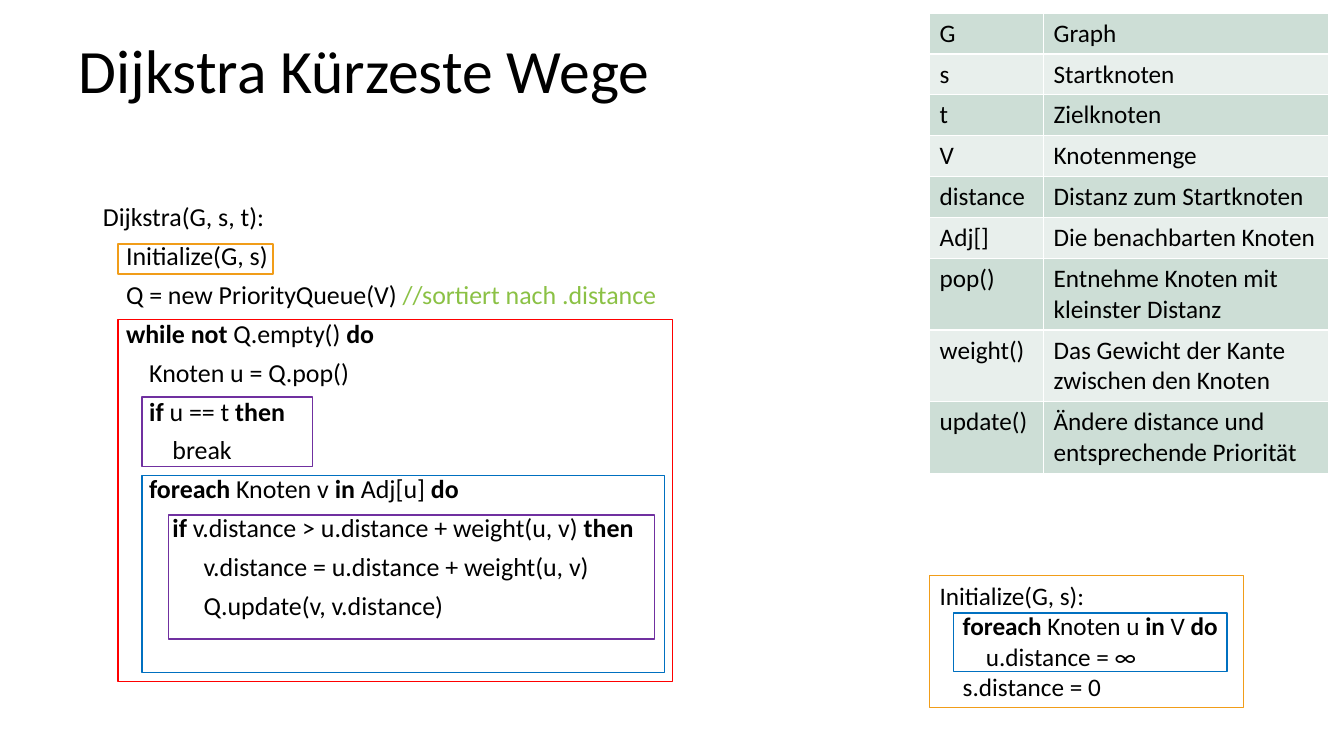
from dataclasses import dataclass
from lxml.etree import SubElement
from pptx import Presentation
from pptx.dml.color import RGBColor as RGB
from pptx.enum.shapes import MSO_SHAPE as SHAPE
from pptx.enum.text import MSO_ANCHOR as ANCHOR, MSO_AUTO_SIZE as AUTO, PP_ALIGN as ALIGN
from pptx.oxml.ns import qn
from pptx.util import Inches, Pt


@dataclass(frozen=True)
class Theme:
    font: str = "Calibri"
    title: float = 44
    code: float = 18.5
    small: float = 18
    black: str = "000000"
    white: str = "FFFFFF"
    comment: str = "8BC145"
    bands: tuple = ("CDDED6", "E8EFEC")
    orange: str = "F19D19"
    red: str = "FF0000"
    purple: str = "7030A0"
    blue: str = "0070C0"


T = Theme()

# Content: code lines are (indent in inches, text); *stars* mark bold keywords,
# and // starts a comment
TITLE = "Dijkstra Kürzeste Wege"
STEP = 0.23
CODE = [
    (0, "Dijkstra(G, s, t):"),
    (STEP, "Initialize(G, s)"),
    (STEP, "Q = new PriorityQueue(V) //sortiert nach .distance"),
    (STEP, "*while not* Q.empty() *do*"),
    (2 * STEP, "Knoten u = Q.pop()"),
    (2 * STEP, "*if* u == t *then*"),
    (3 * STEP, "break"),
    (2 * STEP, "*foreach* Knoten v *in* Adj[u] *do*"),
    (3 * STEP, "*if* v.distance > u.distance + weight(u, v) *then*"),
    (1, "v.distance = u.distance + weight(u, v)"),
    (1, "Q.update(v, v.distance)"),
]
INITIALIZE = [
    (0, "Initialize(G, s):"),
    (STEP, "*foreach* Knoten u *in* V *do*"),
    (2 * STEP, "u.distance = ∞"),
    (STEP, "s.distance = 0"),
]
LEGEND = [
    ("G", "Graph"),
    ("s", "Startknoten"),
    ("t", "Zielknoten"),
    ("V", "Knotenmenge"),
    ("distance", "Distanz zum Startknoten"),
    ("Adj[]", "Die benachbarten Knoten"),
    ("pop()", "Entnehme Knoten mit kleinster Distanz"),
    ("weight()", "Das Gewicht der Kante zwischen den Knoten"),
    ("update()", "Ändere distance und entsprechende Priorität"),
]
COLUMNS = (1.13, 2.83)
ONE_LINE, TWO_LINES, WRAP_AT = 0.4, 0.71, 25
FRAMES = [  # left, top, width, height, colour
    (1.17, 2.42, 1.54, 0.3, T.orange),
    (1.17, 3.17, 5.5, 3.59, T.red),
    (1.41, 3.94, 1.69, 0.69, T.purple),
    (1.41, 4.72, 5.18, 1.95, T.blue),
    (1.67, 5.11, 4.82, 1.23, T.purple),
    (9.46, 6.08, 2.71, 0.58, T.blue),
]


def style(font, size, color=T.black):
    font.name, font.size = T.font, Pt(size)
    font.color.rgb = RGB.from_string(color)


def place(sp, left, top, width, height):
    sp.left, sp.top = Inches(left), Inches(top)
    sp.width, sp.height = Inches(width), Inches(height)


def write_code(tf, lines, size, spacing=1.0, before=0):
    tf.word_wrap, tf.auto_size = True, AUTO.NONE
    tf.vertical_anchor = ANCHOR.TOP
    for i, (indent, text) in enumerate(lines):
        p = tf.paragraphs[0] if i == 0 else tf.add_paragraph()
        p.alignment, p.line_spacing, p.space_before = ALIGN.LEFT, spacing, Pt(before)
        style(p.font, size)
        pPr = p._p.get_or_add_pPr()
        pPr.set("marL", str(Inches(indent)))
        pPr.set("indent", "0")
        pPr.insert_element_before(pPr.makeelement(qn("a:buNone")), "a:tabLst", "a:defRPr")
        code, slashes, comment = text.partition("//")
        for j, part in enumerate(code.split("*")):
            if part:
                r = p.add_run()
                r.text = part
                if j % 2:
                    r.font.bold = True
        if slashes:
            r = p.add_run()
            r.text = slashes + comment
            r.font.color.rgb = RGB.from_string(T.comment)


def add_frame(slide, left, top, width, height, color, weight=1):
    sp = slide.shapes.add_shape(
        SHAPE.RECTANGLE, Inches(left), Inches(top), Inches(width), Inches(height))
    sp.shadow.inherit = False
    sp.fill.background()
    sp.line.color.rgb, sp.line.width = RGB.from_string(color), Pt(weight)
    return sp


def border_cell(cell):
    tcPr = cell._tc.get_or_add_tcPr()
    for i, side in enumerate(("lnL", "lnR", "lnT", "lnB")):
        ln = tcPr.makeelement(qn(f"a:{side}"), {"w": str(Pt(1))})
        fill = SubElement(ln, qn("a:solidFill"))
        SubElement(fill, qn("a:srgbClr"), val=T.white)
        tcPr.insert(i, ln)


def add_legend(slide, left, top):
    heights = [TWO_LINES if len(text) > WRAP_AT else ONE_LINE for _, text in LEGEND]
    table = slide.shapes.add_table(
        len(LEGEND), len(COLUMNS), Inches(left), Inches(top),
        Inches(sum(COLUMNS)), Inches(sum(heights))).table
    table.first_row = table.horz_banding = False
    for column, width in zip(table.columns, COLUMNS):
        column.width = Inches(width)
    for i, (row, height) in enumerate(zip(table.rows, heights)):
        row.height = Inches(height)
        for cell, text in zip(row.cells, LEGEND[i]):
            cell.text = text
            style(cell.text_frame.paragraphs[0].font, T.small)
            cell.fill.solid()
            cell.fill.fore_color.rgb = RGB.from_string(T.bands[i % 2])
            border_cell(cell)


def main():
    prs = Presentation()
    prs.slide_width, prs.slide_height = Inches(13.33), Inches(7.5)
    slide = prs.slides.add_slide(prs.slide_layouts[1])

    # Title
    title = slide.shapes.title
    place(title, 0.68, 0.27, 8.26, 0.84)
    title.text = TITLE
    tf = title.text_frame
    tf.auto_size, tf.vertical_anchor = AUTO.NONE, ANCHOR.TOP
    tf.paragraphs[0].alignment = ALIGN.LEFT
    style(tf.paragraphs[0].font, T.title)

    # Main algorithm
    body = slide.placeholders[1]
    place(body, 0.92, 2, 11.5, 4.76)
    write_code(body.text_frame, CODE, T.code, spacing=0.8, before=10)

    # Legend of symbols
    add_legend(slide, 9.22, 0.13)

    # Initialize routine
    routine = add_frame(slide, 9.22, 5.71, 3.11, 1.31, T.orange, 0.75)
    write_code(routine.text_frame, INITIALIZE, T.small)

    # Frames around the code blocks
    for frame in FRAMES:
        add_frame(slide, *frame)

    prs.save("out.pptx")


if __name__ == "__main__":
    main()
